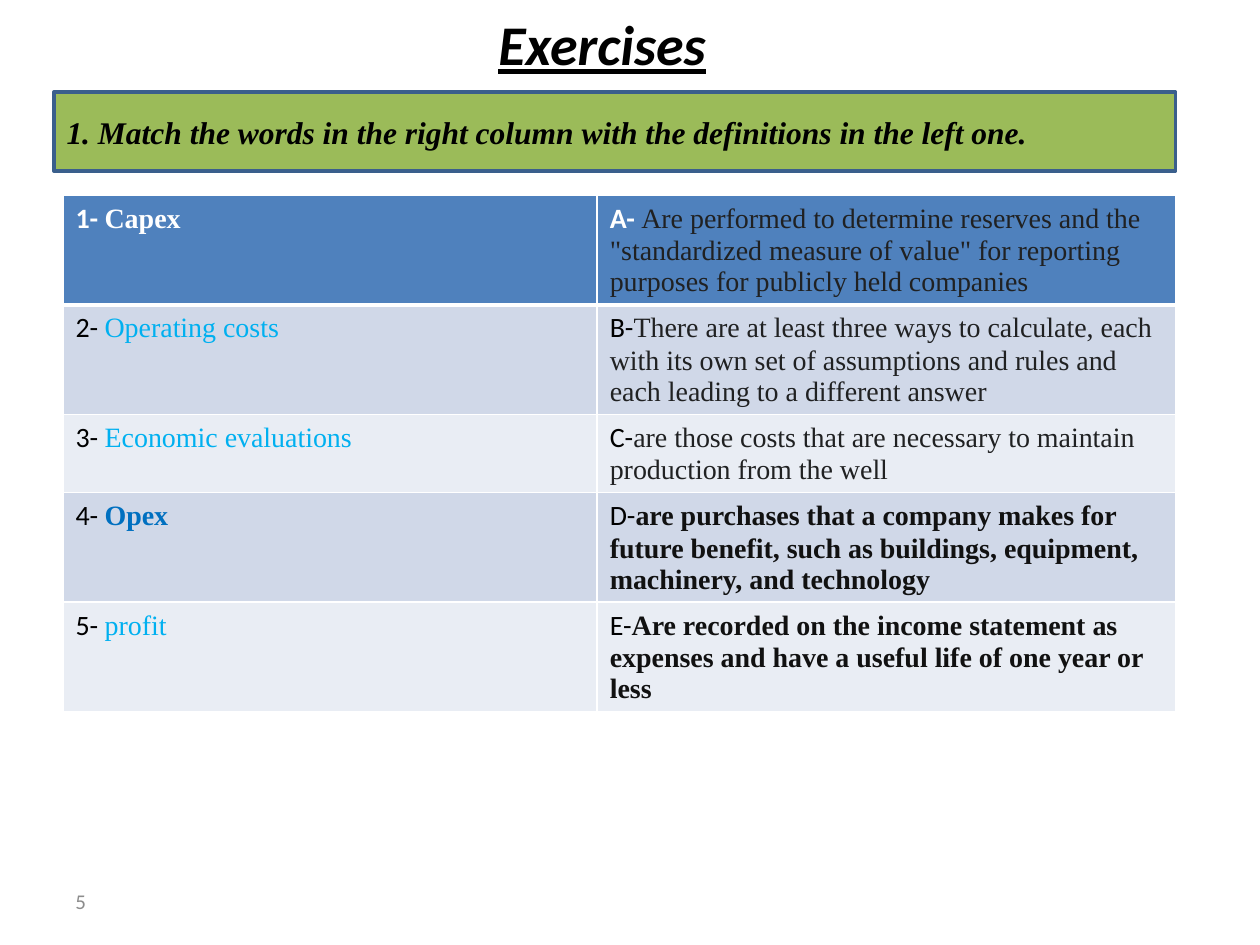
from lxml import etree
from pptx import Presentation
from pptx import util as u
from pptx.dml.color import RGBColor
from pptx.enum import shapes, text
from pptx.oxml.ns import qn

COLORS = {
    "white": "FFFFFF", "black": "000000", "green": "9BBB59", "outline": "3A5F8C",
    "header": "4F81BD", "band_dark": "D0D8E8", "band_light": "E9EDF4",
    "cyan": "00B0F0", "blue": "0070C0", "body": "202122", "dark": "111111",
    "gray": "8C8C8C",
}
SANS, SERIF = "Calibri", "Times New Roman"

# Term, its colour and weight; definition, its colour and weight
MATCHES = [
    ("Capex", "white", True,
     'Are performed to determine reserves and the "standardized measure of value" '
     "for reporting purposes for publicly held companies", "body", False),
    ("Operating costs", "cyan", False,
     "There are at least three ways to calculate, each with its own set of "
     "assumptions and rules and each leading to a different answer", "body", False),
    ("Economic evaluations", "cyan", False,
     "are those costs that are necessary to maintain production from the well",
     "body", False),
    ("Opex", "blue", True,
     "are purchases that a company makes for future benefit, such as buildings, "
     "equipment, machinery, and technology", "dark", True),
    ("profit", "cyan", False,
     "Are recorded on the income statement as expenses and have a useful life of "
     "one year or less", "dark", True),
]
COLUMN_WIDTHS = (4.24, 4.59)
ROW_HEIGHTS = (0.87, 0.87, 0.62, 0.87, 0.87)
LEFT, TABLE_TOP = 0.5, 1.55


def rgb(name):
    return RGBColor.from_string(COLORS[name])


def add_run(paragraph, words, color, **formats):
    run = paragraph.add_run()
    run.text = words
    run.font.color.rgb = rgb(color)
    for name, value in formats.items():
        setattr(run.font, name, value)


def add_box(slide, box, words, color, align, fill=None, line=None, **formats):
    shape = slide.shapes.add_shape(shapes.MSO_SHAPE.RECTANGLE, *map(u.Inches, box))
    shape.shadow.inherit = False
    if fill:
        shape.fill.solid()
        shape.fill.fore_color.rgb = rgb(fill)
    else:
        shape.fill.background()
    if line:
        shape.line.color.rgb = rgb(line)
        shape.line.width = u.Pt(2)
    else:
        shape.line.fill.background()
    frame = shape.text_frame
    frame.word_wrap = True
    frame.vertical_anchor = text.MSO_ANCHOR.MIDDLE
    paragraph = frame.paragraphs[0]
    paragraph.alignment = align
    add_run(paragraph, words, color, **formats)


def set_borders(cell, widths):
    """Draw white borders; widths are points for left, right, top and bottom."""
    properties = cell._tc.get_or_add_tcPr()
    for index, (side, width) in enumerate(zip("LRTB", widths)):
        line = etree.Element(qn(f"a:ln{side}"), w=str(u.Pt(width)))
        fill = etree.SubElement(line, qn("a:solidFill"))
        etree.SubElement(fill, qn("a:srgbClr"), val=COLORS["white"])
        properties.insert(index, line)


def add_match_table(slide):
    frame = slide.shapes.add_table(
        len(MATCHES), len(COLUMN_WIDTHS), u.Inches(LEFT), u.Inches(TABLE_TOP),
        u.Inches(sum(COLUMN_WIDTHS)), u.Inches(sum(ROW_HEIGHTS)))
    table = frame.table
    for column, width in zip(table.columns, COLUMN_WIDTHS):
        column.width = u.Inches(width)
    for row, height in zip(table.rows, ROW_HEIGHTS):
        row.height = u.Inches(height)

    for index, match in enumerate(MATCHES):
        is_header = index == 0
        band = "header" if is_header else "band_dark" if index % 2 else "band_light"
        letter = "ABCDE"[index]
        labels = (f"{index + 1}- ", f"{letter}- " if is_header else f"{letter}-")
        for column, (label, content) in enumerate(zip(labels, (match[:3], match[3:]))):
            words, color, bold = content
            cell = table.cell(index, column)
            cell.fill.solid()
            cell.fill.fore_color.rgb = rgb(band)
            set_borders(cell, (1, 1, 3 if index == 1 else 1, 3 if is_header else 1))
            paragraph = cell.text_frame.paragraphs[0]
            add_run(paragraph, label, "white" if is_header else "black",
                    name=SANS, size=u.Pt(16), bold=is_header)
            add_run(paragraph, words, color, name=SERIF, size=u.Pt(16), bold=bold)


def main():
    presentation = Presentation()
    presentation.slide_width, presentation.slide_height = u.Inches(10), u.Inches(7.5)
    slide = presentation.slides.add_slide(presentation.slide_layouts[6])
    left, center = text.PP_ALIGN.LEFT, text.PP_ALIGN.CENTER

    add_box(slide, (0.43, 0.73, 8.9, 0.63),
            "1. Match the words in the right column with the definitions in the left one.",
            "black", left, "green", "outline",
            name=SERIF, size=u.Pt(18), bold=True, italic=True)
    add_box(slide, (3.01, 0.03, 3.54, 0.63), "Exercises", "black", center, None, "white",
            name=SANS, size=u.Pt(32), bold=True, italic=True, underline=True)
    add_box(slide, (LEFT, 6.95, 2.33, 0.4), "5", "gray", left,
            name=SANS, size=u.Pt(12))
    add_match_table(slide)
    presentation.save("out.pptx")


if __name__ == "__main__":
    main()
